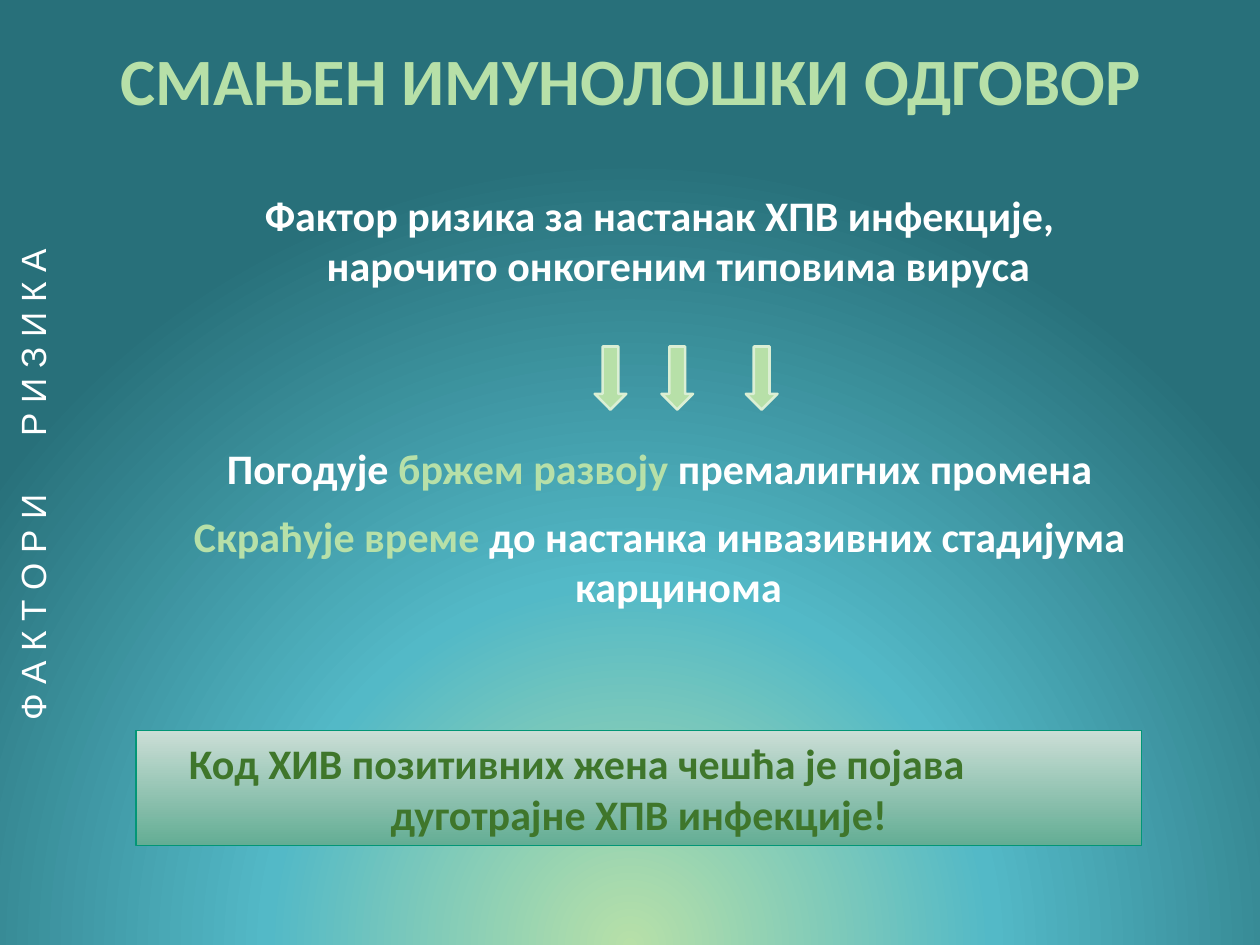
"""Builds the slide on reduced immune response as a risk factor."""
import pptx
import pptx.dml.color
import pptx.enum.shapes
import pptx.enum.text
import pptx.oxml
import pptx.oxml.ns
import pptx.util

COLORS = {
    "lime": "B7E0A8", "aqua": "53B9C7", "teal": "28707A", "white": "FFFFFF",
    "arrow_edge": "DBEFD4", "note_top": "CBDED6", "note_bottom": "63AD94",
    "note_edge": "029676", "note_text": "3F762B",
}
ALIGN = pptx.enum.text.PP_ALIGN
ANCHOR = pptx.enum.text.MSO_ANCHOR
SHAPES = pptx.enum.shapes.MSO_SHAPE

deck = pptx.Presentation()
deck.slide_width = pptx.util.Inches(10)
deck.slide_height = pptx.util.Inches(7.5)
column = deck.slide_width / 100
row = deck.slide_height / 100
page = deck.slides.add_slide(deck.slide_layouts[6])


def rgb(name):
    return pptx.dml.color.RGBColor.from_string(COLORS[name])


def add_span(para, text, size, color, font="Calibri", bold=True):
    span = para.add_run()
    span.text = text
    span.font.size = pptx.util.Pt(size)
    span.font.name = font
    span.font.bold = bold
    span.font.color.rgb = rgb(color)
    return span


page.background.fill.gradient()
plain_gradient = page.element.find(".//" + pptx.oxml.ns.qn("a:gradFill"))
stops = "".join(
    f'<a:gs pos="{share * 1000}"><a:srgbClr val="{COLORS[name]}"/></a:gs>'
    for share, name in [(0, "lime"), (46, "aqua"), (100, "teal")]
)
glow = pptx.oxml.parse_xml(
    f'<a:gradFill {pptx.oxml.ns.nsdecls("a")} rotWithShape="1"><a:gsLst>{stops}</a:gsLst>'
    '<a:path path="circle"><a:fillToRect l="50000" t="130000" r="50000" b="-30000"/></a:path>'
    '</a:gradFill>'
)
plain_gradient.getparent().replace(plain_gradient, glow)

title = page.shapes.add_textbox(
    *map(round, (8.6 * column, 3.33 * row, 90.4 * column, 10 * row)))
title.text_frame.word_wrap = True
title.text_frame.vertical_anchor = ANCHOR.MIDDLE
add_span(title.text_frame.paragraphs[0], "СМАЊЕН ИМУНОЛОШКИ ОДГОВОР", 37.8, "lime")

body = page.shapes.add_textbox(
    *map(round, (14 * column, 19.4 * row, 76.7 * column, 53.5 * row)))
body.text_frame.word_wrap = True
statements = [
    (0, [("Фактор ризика за настанак ХПВ инфекције, нарочито онкогеним типовима вируса", "white")]),
    (87, [("Погодује ", "white"), ("бржем развоју ", "lime"), ("премалигних промена", "white")]),
    (10, [("Скраћује време ", "lime"), ("до настанка инвазивних стадијума карцинома", "white")]),
]
for index, (space, spans) in enumerate(statements):
    para = body.text_frame.add_paragraph() if index else body.text_frame.paragraphs[0]
    para.alignment = ALIGN.CENTER
    para.space_before = pptx.util.Pt(space)
    hanging = para._p.get_or_add_pPr()
    hanging.set("marL", str(round(3 * column)))
    hanging.set("indent", str(round(-3 * column)))
    for text, color in spans:
        add_span(para, text, 24, color)

for left in (47.2, 52.5, 59.2):
    arrow = page.shapes.add_shape(
        SHAPES.DOWN_ARROW,
        *map(round, (left * column, 36.67 * row, 2.5 * column, 6.67 * row)))
    arrow.shadow.inherit = False
    arrow.fill.solid()
    arrow.fill.fore_color.rgb = rgb("lime")
    arrow.line.color.rgb = rgb("arrow_edge")
    arrow.line.width = pptx.util.Pt(1.5)

note = page.shapes.add_shape(
    SHAPES.RECTANGLE,
    *map(round, (10.8 * column, 77.33 * row, 79.8 * column, 12.13 * row)))
note.shadow.inherit = False
note.fill.gradient()
note.fill.gradient_angle = 270
for stop, name in zip(note.fill.gradient_stops, ("note_top", "note_bottom")):
    stop.color.rgb = rgb(name)
note.line.color.rgb = rgb("note_edge")
note.line.width = pptx.util.Pt(0.75)
note.text_frame.word_wrap = True
note.text_frame.vertical_anchor = ANCHOR.MIDDLE
first_line = note.text_frame.paragraphs[0]
first_line.alignment = ALIGN.LEFT
first_line._p.get_or_add_pPr().set("marL", str(round(3.2 * column)))
add_span(first_line, "Код ХИВ позитивних жена чешћа је појава", 24, "note_text")
second_line = note.text_frame.add_paragraph()
second_line.alignment = ALIGN.CENTER
add_span(second_line, "дуготрајне ХПВ инфекције!", 24, "note_text")

side_label = page.shapes.add_textbox(
    *map(round, (0.4 * column, 18.93 * row, 5.4 * column, 58.67 * row)))
side_label.text_frame.word_wrap = True
side_label.text_frame._txBody.bodyPr.set("vert", "vert270")
side_para = side_label.text_frame.paragraphs[0]
for text, tracking in [("Ф А К Т О Р И", 0), (" ", 27.8), ("Р И З И К А", 0)]:
    span = add_span(side_para, text, 20, "white", "Arial", False)
    span.font._element.set("spc", str(round(tracking * 100)))

deck.save("out.pptx")
